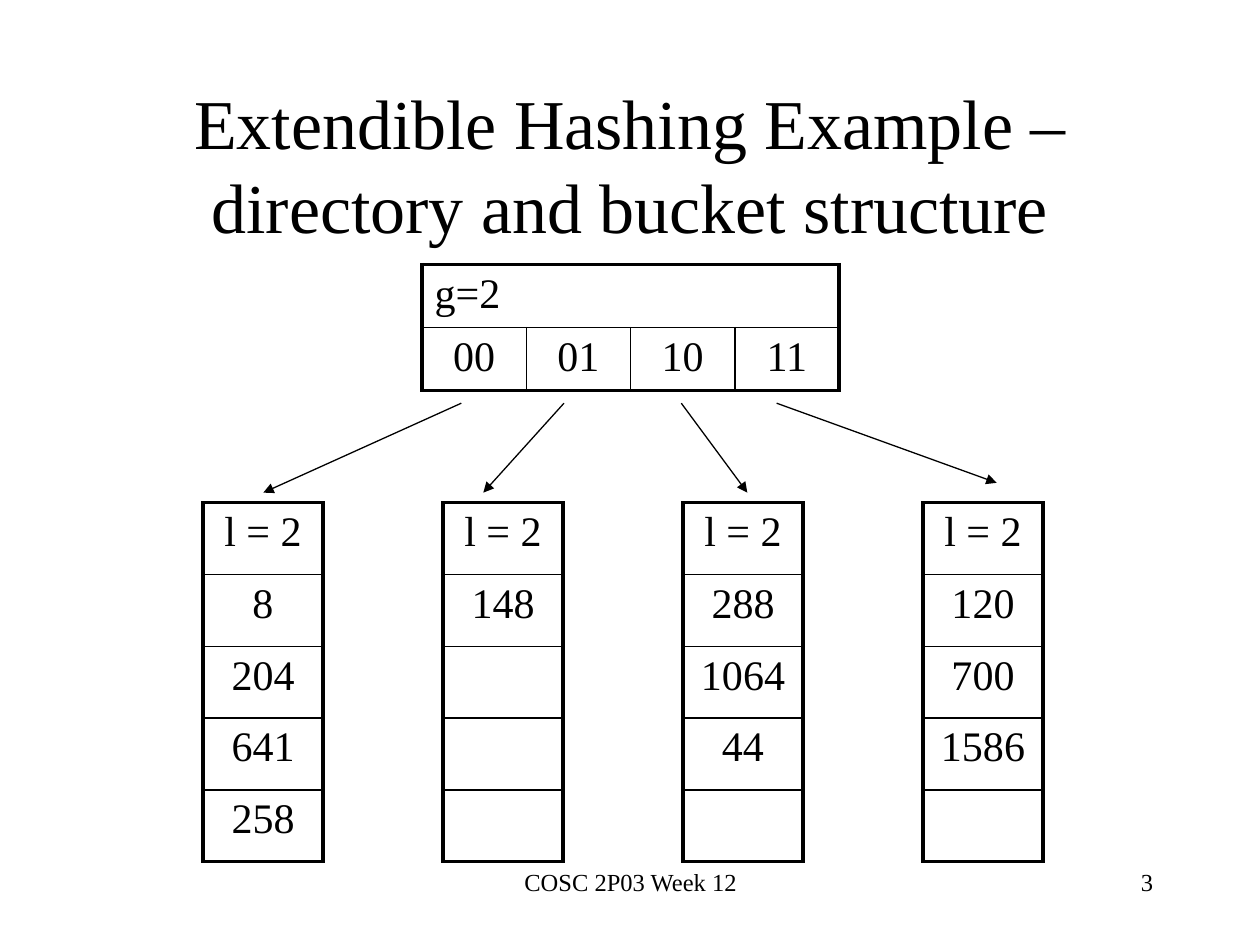
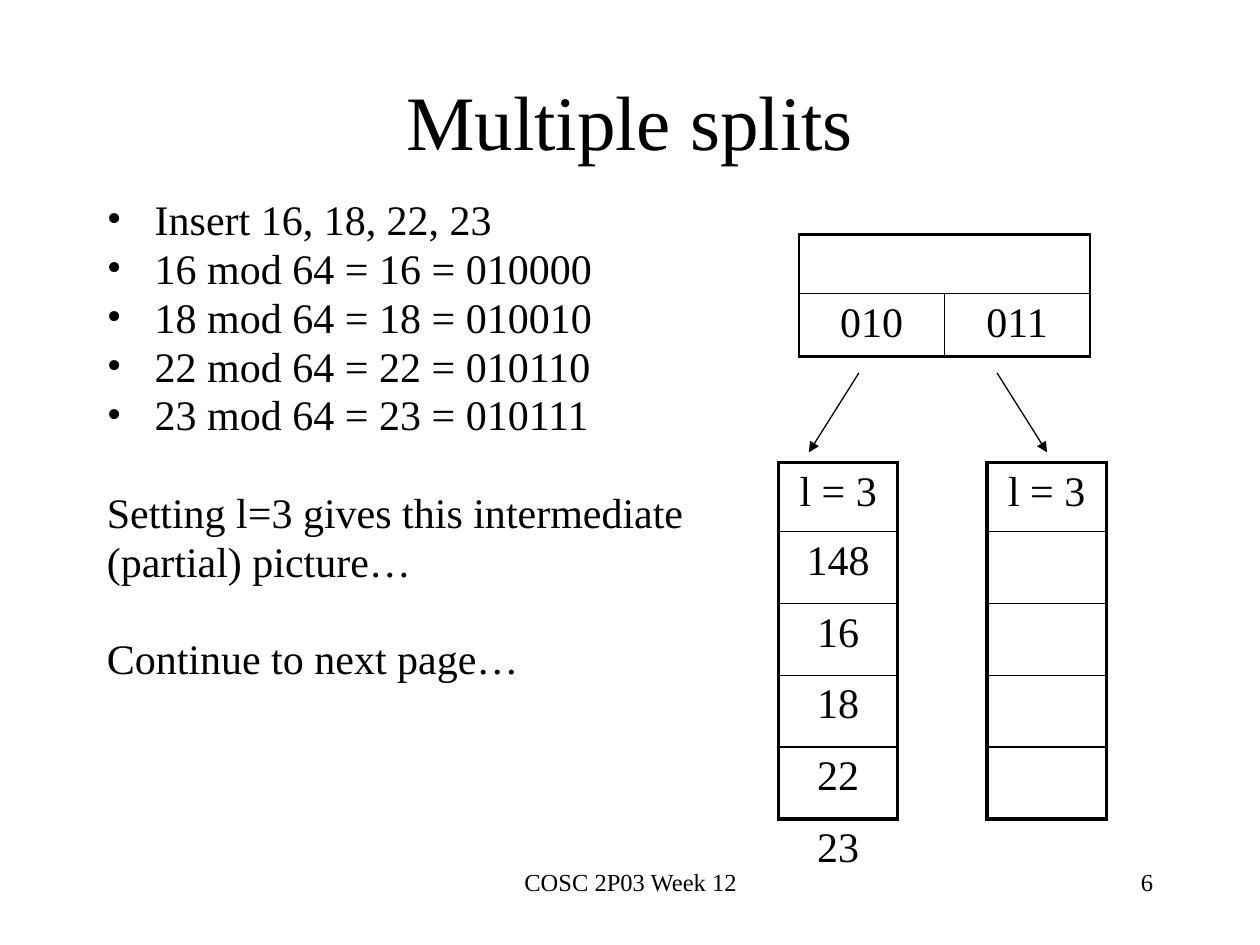
from lxml.etree import SubElement
from pptx import Presentation
from pptx.dml.color import RGBColor
from pptx.enum.shapes import MSO_CONNECTOR
from pptx.enum.text import MSO_ANCHOR, PP_ALIGN
from pptx.oxml.ns import qn
from pptx.util import Inches, Pt

BLACK = RGBColor(0x00, 0x00, 0x00)
WHITE = RGBColor(0xFF, 0xFF, 0xFF)
FONT = "Times New Roman"
NO_GRID = "{2D5ABB26-0587-4C30-8999-92F81FD0307C}"
THICK, THIN, NONE = 2.25, 1, 0
BODY_SIZE = 24
LINE_PITCH = 27.9
DIRECTORY_ROW = 0.47
BUCKET_ROW = 0.57


def write(tf, lines, size=BODY_SIZE, align=PP_ALIGN.LEFT, anchor=MSO_ANCHOR.TOP):
    tf.word_wrap = True
    tf.vertical_anchor = anchor
    for i, line in enumerate(lines):
        p = tf.paragraphs[0] if i == 0 else tf.add_paragraph()
        p.alignment = align
        r = p.add_run()
        r.text = line
        r.font.size = Pt(size)
        r.font.name = FONT
        r.font.color.rgb = BLACK


def text_box(s, box, lines, **fmt):
    tf = s.shapes.add_textbox(*map(Inches, box)).text_frame
    write(tf, lines, **fmt)
    return tf


def set_borders(cell, left, right, top, bottom):
    tc_pr = cell._tc.get_or_add_tcPr()
    sides = zip(("a:lnL", "a:lnR", "a:lnT", "a:lnB"), (left, right, top, bottom))
    for i, (tag, width) in enumerate((t, w) for t, w in sides if w):
        ln = SubElement(tc_pr, qn(tag), w=str(Pt(width)))
        fill = SubElement(ln, qn("a:solidFill"))
        SubElement(fill, qn("a:srgbClr"), val=str(BLACK))
        tc_pr.insert(i, ln)


def add_grid(s, left, top, cols, rows):
    sp = s.shapes.add_table(len(rows), len(cols), Inches(left), Inches(top),
                            Inches(sum(cols)), Inches(sum(rows)))
    table = sp.table
    table.first_row = table.horz_banding = False
    table._tbl.tblPr.find(qn("a:tableStyleId")).text = NO_GRID
    for col, width in zip(table.columns, cols):
        col.width = Inches(width)
    for row, height in zip(table.rows, rows):
        row.height = Inches(height)
    for cell in table.iter_cells():
        cell.fill.background()
    return table


def cell_text(cell, text, align=PP_ALIGN.CENTER):
    if text:
        write(cell.text_frame, [text], align=align)


def directory(s, box, prefixes, label="", side=THICK):
    left, top, width = box
    n = len(prefixes)
    table = add_grid(s, left, top, [width / n] * n, [DIRECTORY_ROW] * 2)
    if not label:
        table.cell(0, 0).merge(table.cell(0, n - 1))
    cell_text(table.cell(0, 0), label, align=PP_ALIGN.LEFT)
    for c, prefix in enumerate(prefixes):
        first, last = c == 0, c == n - 1
        head, slot = table.cell(0, c), table.cell(1, c)
        cell_text(slot, prefix)
        head_right = last or head.is_merge_origin
        set_borders(head, side if first else NONE, side if head_right else NONE, THICK, THIN)
        set_borders(slot, side if first else THIN, side if last else THIN, THIN, THICK)


def buckets(s, box, columns, gap, first_row=BUCKET_ROW, capacity=5):
    left, top, width = box
    n = len(columns)
    bucket = (width - gap * (n - 1)) / n
    depth = max(capacity, *map(len, columns))
    cols = [gap if c % 2 else bucket for c in range(2 * n - 1)]
    table = add_grid(s, left, top, cols, [first_row] + [BUCKET_ROW] * (depth - 1))
    for c, keys in enumerate(columns):
        for r in range(depth):
            cell = table.cell(r, 2 * c)
            cell_text(cell, keys[r] if r < len(keys) else "")
            if r < capacity:
                set_borders(cell, THICK, THICK, THIN if r else THICK,
                            THICK if r == capacity - 1 else THIN)


def arrows(s, box, spans):
    left, top, width, height = box
    for start, end, drop in spans:
        line = s.shapes.add_connector(
            MSO_CONNECTOR.STRAIGHT,
            Inches(left + start * width), Inches(top),
            Inches(left + end * width), Inches(top + drop * height))
        line.line.color.rgb = BLACK
        line.line.width = Pt(0.75)
        SubElement(line.line._get_or_add_ln(), qn("a:tailEnd"),
                   type="triangle", w="med", len="med")
        SubElement(line._element.spPr, qn("a:effectLst"))


def notes_list(s, box, bullets, remarks):
    tf = text_box(s, box, bullets + remarks)
    for i, p in enumerate(tf.paragraphs):
        p.line_spacing = Pt(LINE_PITCH)
        p_pr = p._p.get_or_add_pPr()
        p_pr.set("marL", str(Inches(0.38)))
        p_pr.set("indent", str(-Inches(0.38)))
        if i < len(bullets):
            SubElement(p_pr, qn("a:buFont"), typeface=FONT)
            SubElement(p_pr, qn("a:buChar"), char="•")
        else:
            SubElement(p_pr, qn("a:buNone"))
    return tf


def base_slide(prs, title, title_box, number, size):
    s = prs.slides.add_slide(prs.slide_layouts[6])
    s.background.fill.solid()
    s.background.fill.fore_color.rgb = WHITE
    text_box(s, (3.42, 6.83, 3.17, 0.5), ["COSC 2P03 Week 12"], size=14, align=PP_ALIGN.CENTER)
    text_box(s, (7.17, 6.83, 2.08, 0.5), [number], size=14, align=PP_ALIGN.RIGHT)
    text_box(s, title_box, [title], size=size, align=PP_ALIGN.CENTER, anchor=MSO_ANCHOR.MIDDLE)
    return s


def structure_slide(prs):
    s = base_slide(prs, "Extendible Hashing Example – directory and bucket structure",
                   (0.75, 0.67, 8.5, 1.25), "3", 40)
    directory(s, (3.35, 2.1, 3.31), ["00", "01", "10", "11"], label="g=2")
    buckets(s, (1.61, 3.99, 6.67),
            [["l = 2", "8", "204", "641", "258"],
             ["l = 2", "148"],
             ["l = 2", "288", "1064", "44"],
             ["l = 2", "120", "700", "1586"]], gap=0.95)
    arrows(s, (2.09, 3.2, 5.82, 0.71),
           [(0.27, 0, 1), (0.41, 0.3, 1), (0.57, 0.66, 1), (0.7, 1, 0.89)])


def splits_slide(prs):
    s = base_slide(prs, "Multiple splits", (0.75, 0.44, 8.5, 1.02), "6", 44)
    residues = [f"{key} mod 64 = {key % 64} = {key % 64:06b}" for key in (16, 18, 22, 23)]
    tf = notes_list(s, (0.75, 1.5, 8.5, 4.25), ["Insert 16, 18, 22, 23"] + residues,
                    ["Setting l=3 gives this intermediate", "(partial) picture…",
                     "Continue to next page…"])
    for i in (5, 7):
        tf.paragraphs[i].space_before = Pt(LINE_PITCH)
    buckets(s, (6.18, 3.67, 2.6),
            [["l = 3", "148", "16", "18", "22", "23"], ["l = 3"]], gap=0.71, first_row=0.55)
    directory(s, (6.34, 1.86, 2.31), ["010", "011"], side=THIN)
    arrows(s, (6.42, 2.96, 1.89, 0.63), [(0.21, 0, 1), (0.79, 1, 1)])


def main():
    prs = Presentation()
    prs.slide_width, prs.slide_height = Inches(10), Inches(7.5)
    structure_slide(prs)
    splits_slide(prs)
    prs.save("out.pptx")


if __name__ == "__main__":
    main()
